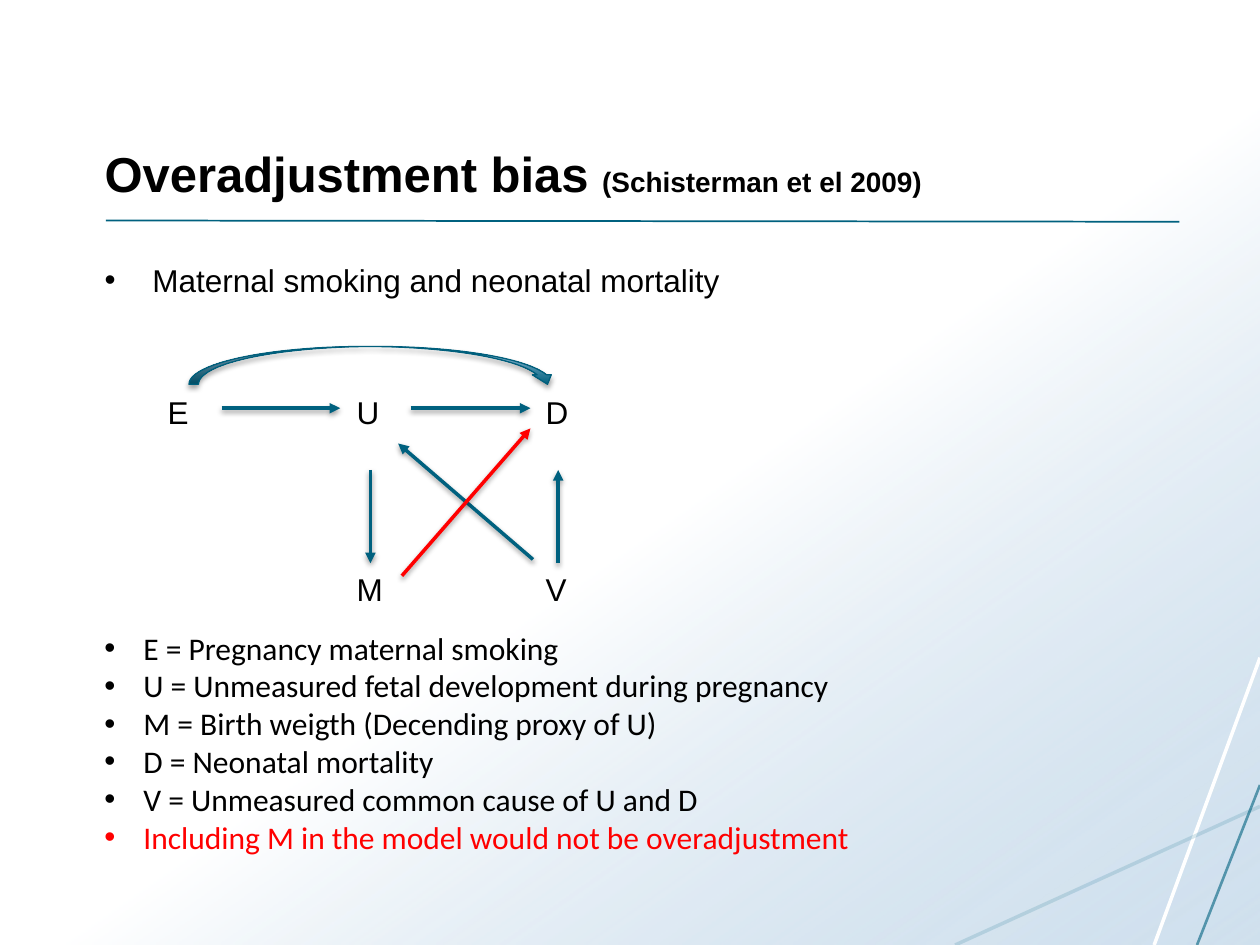
from pptx import Presentation
from pptx.dml.color import RGBColor
from pptx.enum.shapes import MSO_CONNECTOR, MSO_SHAPE
from pptx.enum.text import MSO_ANCHOR, MSO_AUTO_SIZE, PP_ALIGN
from pptx.oxml.ns import qn
from pptx.util import Inches, Pt
from lxml.etree import SubElement

BLACK = RGBColor(0x00, 0x00, 0x00)
WHITE = RGBColor(0xFF, 0xFF, 0xFF)
RED = RGBColor(0xFF, 0x00, 0x00)
TEAL = RGBColor(0x00, 0x61, 0x7F)
DARK_TEAL = RGBColor(0x00, 0x5F, 0x7C)
MID_TEAL = RGBColor(0x15, 0x71, 0x8F)
PALE_BLUE = RGBColor(0xA9, 0xC7, 0xE0)

BODY_ROWS = (
    ("Maternal smoking and neonatal mortality", 0.38, 3.6),
    ("\tE\t\t\tU\t\t\tD", 0, 54),
    ("\t\t\t\tM\t\t\tV", 0, 79.5),
)
DEFINITIONS = (
    "E = Pregnancy maternal smoking",
    "U = Unmeasured fetal development during pregnancy",
    "M = Birth weigth (Decending proxy of U)",
    "D = Neonatal mortality",
    "V = Unmeasured common cause of U and D",
)
CONCLUSION = "Including M in the model would not be overadjustment"
CAUSAL_ARROWS = (
    ((1.76, 3.24), (2.7, 3.24), TEAL),
    ((3.26, 3.24), (4.21, 3.24), TEAL),
    ((2.94, 3.73), (2.94, 4.47), TEAL),
    ((4.43, 4.47), (4.43, 3.73), TEAL),
    ((4.23, 4.44), (3.16, 3.52), TEAL),
    ((3.19, 4.57), (4.21, 3.4), RED),
)
DECOR_LINES = (
    ((10, 5.22), (9.16, 7.5), WHITE, 2, 100),
    ((10, 6.4), (7.58, 7.5), MID_TEAL, 2, 16),
    ((10, 6.23), (9.5, 7.5), TEAL, 1.5, 60),
    ((0.84, 1.75), (9.36, 1.76), TEAL, 1, 100),
)


def place(shape, left, top, width, height):
    """Move and size a shape, in inches."""
    shape.left, shape.top = Inches(left), Inches(top)
    shape.width, shape.height = Inches(width), Inches(height)


def set_alpha(color_element, percent):
    """Give a colour element an opacity."""
    SubElement(color_element, qn("a:alpha"), val=str(percent * 1000))


def set_shadow(shape, percent=0, distance=0):
    """Replace the theme shadow by a soft downward one, or by none."""
    effects = SubElement(shape.element.spPr, qn("a:effectLst"))
    if percent:
        shadow = SubElement(effects, qn("a:outerShdw"), blurRad=str(Pt(3.1)),
                            dist=str(Pt(distance)), dir="5400000", rotWithShape="0")
        set_alpha(SubElement(shadow, qn("a:srgbClr"), val=str(BLACK)), percent)


def set_gradient(shape, colors, first_stop, angle):
    """Fill a shape with a two-colour linear gradient."""
    shape.fill.gradient()
    shape.fill.gradient_angle = angle
    for stop, color, position in zip(shape.fill.gradient_stops, colors, (first_stop, 1)):
        stop.color.rgb = color
        stop.position = position


def add_line(page, start, end, color, width):
    """Draw a straight line between two points in inches."""
    points = [Inches(value) for value in (*start, *end)]
    line = page.shapes.add_connector(MSO_CONNECTOR.STRAIGHT, *points)
    line.line.color.rgb = color
    line.line.width = Pt(width)
    return line


def add_arrow(page, start, end, color):
    """Draw a shadowed causal arrow."""
    arrow = add_line(page, start, end, color, 2)
    SubElement(arrow.element.spPr.find(qn("a:ln")), qn("a:tailEnd"), type="triangle")
    set_shadow(arrow, 38, 1.6)


def add_backdrop(page):
    """Lay the gradient and the decorative lines behind the text."""
    panel = page.shapes.add_shape(MSO_SHAPE.RECTANGLE, 0, 0, Inches(10), Inches(7.5))
    set_gradient(panel, (WHITE, PALE_BLUE), 0.54, 305)
    set_alpha(list(panel.element.iter(qn("a:srgbClr")))[-1], 54)
    panel.line.fill.background()
    set_shadow(panel)
    page.shapes.title.element.addprevious(panel.element)
    for start, end, color, width, opacity in DECOR_LINES:
        line = add_line(page, start, end, color, width)
        if opacity < 100:
            set_alpha(next(line.element.iter(qn("a:srgbClr"))), opacity)
        set_shadow(line)
        page.shapes.title.element.addprevious(line.element)


def format_paragraph(paragraph, font_name, color=BLACK, indent=0, space_before=0):
    """Set font and spacing, with a hanging bullet when indented."""
    paragraph.alignment = PP_ALIGN.LEFT
    paragraph.space_before = Pt(space_before)
    paragraph.font.name = font_name
    paragraph.font.size = Pt(18)
    paragraph.font.color.rgb = color
    properties = paragraph._p.get_or_add_pPr()
    properties.set("marL", str(Inches(indent)))
    properties.set("indent", str(Inches(-indent)))
    if indent:
        bullet = SubElement(properties, qn("a:buChar"), char="•")
    else:
        bullet = SubElement(properties, qn("a:buNone"))
    properties.find(qn("a:defRPr")).addprevious(bullet)
    bullet.addprevious(SubElement(properties, qn("a:buFont"), typeface="Arial"))


def fill_title(title):
    """Write the heading with its smaller citation."""
    place(title, 0.73, 0.33, 8.62, 1.33)
    frame = title.text_frame
    frame.auto_size = MSO_AUTO_SIZE.NONE
    frame.vertical_anchor = MSO_ANCHOR.BOTTOM
    paragraph = frame.paragraphs[0]
    paragraph.alignment = PP_ALIGN.LEFT
    paragraph.font.name = "Arial"
    paragraph.font.bold = True
    paragraph.font.color.rgb = BLACK
    for text, size in (("Overadjustment bias ", 28), ("(Schisterman et el 2009)", 16)):
        span = paragraph.add_run()
        span.text = text
        span.font.size = Pt(size)


def fill_body(body):
    """Write the topic and the two rows of diagram nodes."""
    place(body, 0.73, 2.02, 8.22, 4.71)
    frame = body.text_frame
    frame.auto_size = MSO_AUTO_SIZE.NONE
    frame.text = "\n".join(text for text, _, _ in BODY_ROWS)
    for paragraph, (_, indent, space_before) in zip(frame.paragraphs, BODY_ROWS):
        format_paragraph(paragraph, "Arial", indent=indent, space_before=space_before)


def add_definitions(page):
    """List the meaning of each node and the conclusion."""
    box = page.shapes.add_textbox(Inches(0.73), Inches(4.94), Inches(8.88), Inches(1.92))
    frame = box.text_frame
    frame.word_wrap = True
    frame.auto_size = MSO_AUTO_SIZE.SHAPE_TO_FIT_TEXT
    frame.text = "\n".join((*DEFINITIONS, CONCLUSION))
    for paragraph in frame.paragraphs:
        color = RED if paragraph.text == CONCLUSION else BLACK
        format_paragraph(paragraph, "Calibri", color, indent=0.31)


def add_curved_arrow(page):
    """Draw the direct effect arching from E to D."""
    arrow = page.shapes.add_shape(MSO_SHAPE.CURVED_DOWN_ARROW, Inches(1.5), Inches(2.75),
                                  Inches(2.92), Inches(0.3))
    set_gradient(arrow, (TEAL, PALE_BLUE), 0, 90)
    arrow.line.color.rgb = DARK_TEAL
    arrow.line.width = Pt(0.75)
    set_shadow(arrow, 35, 1.8)


def main():
    """Build and save the slide."""
    deck = Presentation()
    deck.slide_width, deck.slide_height = Inches(10), Inches(7.5)
    page = deck.slides.add_slide(deck.slide_layouts[1])
    add_backdrop(page)
    fill_title(page.shapes.title)
    fill_body(page.placeholders[1])
    add_definitions(page)
    add_curved_arrow(page)
    for start, end, color in CAUSAL_ARROWS:
        add_arrow(page, start, end, color)
    deck.save("out.pptx")


if __name__ == "__main__":
    main()
